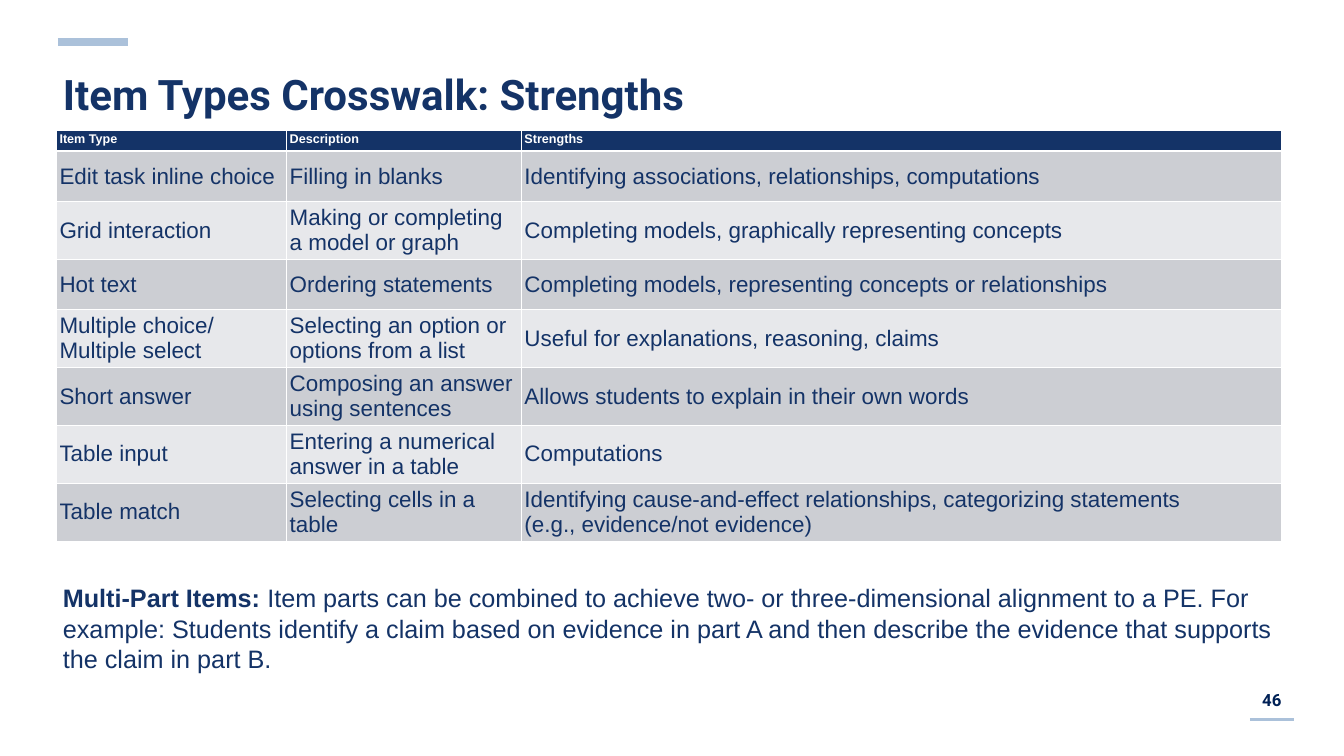
from dataclasses import dataclass

from lxml.etree import SubElement
from pptx import Presentation
from pptx.dml.color import RGBColor
from pptx.enum.shapes import MSO_CONNECTOR
from pptx.enum.text import MSO_ANCHOR, MSO_AUTO_SIZE, PP_ALIGN
from pptx.oxml.ns import qn
from pptx.util import Cm, Pt


@dataclass
class Theme:
    navy: str = "143367"
    number: str = "002156"
    accent: str = "ABC1DA"
    white: str = "FFFFFF"
    bands: tuple = ("CCCED3", "E7E8EB")
    heading_font: str = "Roboto"
    body_font: str = "Arial"
    title_size: int = 60
    note_size: int = 36
    cell_size: int = 32
    number_size: int = 24
    header_size: int = 18


theme = Theme()


def add_text(para, text, *, size, color=theme.navy, font=theme.body_font,
             bold=False, align=PP_ALIGN.LEFT):
    """Append text to a paragraph; a newline becomes a line break."""
    para.alignment = align
    for index, line in enumerate(text.split("\n")):
        if index:
            para.add_line_break()
        span = para.add_run()
        span.text = line
        span.font.name = font
        span.font.size = Pt(size)
        span.font.bold = bold
        span.font.color.rgb = RGBColor.from_string(color)


def set_border(cell, side, width):
    """Draw one white cell border; sides go in the order L, R, T, B."""
    line = SubElement(cell._tc.get_or_add_tcPr(), qn(f"a:ln{side}"), w=str(Pt(width)))
    fill = SubElement(line, qn("a:solidFill"))
    SubElement(fill, qn("a:srgbClr"), val=theme.white)


deck = Presentation()
deck.slide_width, deck.slide_height = Cm(67.73), Cm(38.1)
page = deck.slides.add_slide(deck.slide_layouts[5])

# Accent lines: left, right, y, width in points
for left, right, y, width in [(2.92, 6.43, 2.11, 11), (62.99, 65.2, 36.25, 5)]:
    accent = page.shapes.add_connector(MSO_CONNECTOR.STRAIGHT, Cm(left), Cm(y), Cm(right), Cm(y))
    accent.line.color.rgb = RGBColor.from_string(theme.accent)
    accent.line.width = Pt(width)
    SubElement(accent._element.spPr, qn("a:effectLst"))

# Page number
number_box = page.shapes.add_textbox(Cm(62.99), Cm(34.26), Cm(2.21), Cm(2.03))
number_box.text_frame.word_wrap = True
number_box.text_frame.vertical_anchor = MSO_ANCHOR.MIDDLE
add_text(number_box.text_frame.paragraphs[0], "46", size=theme.number_size,
         color=theme.number, font=theme.heading_font, bold=True, align=PP_ALIGN.CENTER)

# Title
title = page.shapes.title
title.left, title.top, title.width, title.height = Cm(2.92), Cm(3.2), Cm(61.98), Cm(4.37)
title.text_frame.auto_size = MSO_AUTO_SIZE.NONE
title.text_frame.vertical_anchor = MSO_ANCHOR.TOP
title_para = title.text_frame.paragraphs[0]
title_para.line_spacing = 1.05
add_text(title_para, "Item Types Crosswalk: Strengths", size=theme.title_size,
         font=theme.heading_font, bold=True)

# Item type table
rows = [
    ("Item Type", "Description", "Strengths"),
    ("Edit task inline choice", "Filling in blanks",
     "Identifying associations, relationships, computations"),
    ("Grid interaction", "Making or completing a model or graph",
     "Completing models, graphically representing concepts"),
    ("Hot text", "Ordering statements",
     "Completing models, representing concepts or relationships"),
    ("Multiple choice/ Multiple select", "Selecting an option or options from a list",
     "Useful for explanations, reasoning, claims"),
    ("Short answer", "Composing an answer using sentences",
     "Allows students to explain in their own words"),
    ("Table input", "Entering a numerical answer in a table", "Computations"),
    ("Table match", "Selecting cells in a table",
     "Identifying cause-and-effect relationships, categorizing statements \n"
     "(e.g., evidence/not evidence)"),
]
column_widths = [11.6, 11.83, 38.32]
row_heights = [1.04, 2.54, 2.8, 2.54, 2.8, 2.8, 2.8, 2.8]

table = page.shapes.add_table(len(rows), len(column_widths), Cm(2.82), Cm(6.58),
                              Cm(sum(column_widths)), Cm(sum(row_heights))).table
for column, width in zip(table.columns, column_widths):
    column.width = Cm(width)
for r, texts in enumerate(rows):
    table.rows[r].height = Cm(row_heights[r])
    header = r == 0
    for c, text in enumerate(texts):
        cell = table.cell(r, c)
        cell.margin_left = cell.margin_right = Cm(0.18)
        cell.margin_top = cell.margin_bottom = Cm(0.1)
        cell.vertical_anchor = MSO_ANCHOR.TOP if header else MSO_ANCHOR.MIDDLE
        for side in "LRTB":
            thick = (header and side == "B") or (r == 1 and side == "T")
            set_border(cell, side, 3 if thick else 1)
        cell.fill.solid()
        cell.fill.fore_color.rgb = RGBColor.from_string(
            theme.navy if header else theme.bands[(r - 1) % 2])
        add_text(cell.text_frame.paragraphs[0], text, bold=header,
                 size=theme.header_size if header else theme.cell_size,
                 color=theme.white if header else theme.navy)

# Note on multi-part items
note_box = page.shapes.add_textbox(Cm(2.92), Cm(29.24), Cm(61.9), Cm(4.88))
note_box.text_frame.word_wrap = True
note_box.text_frame.auto_size = MSO_AUTO_SIZE.SHAPE_TO_FIT_TEXT
note_para = note_box.text_frame.paragraphs[0]
add_text(note_para, "Multi-Part Items: ", size=theme.note_size, bold=True)
add_text(note_para, "Item parts can be combined to achieve two- or three-dimensional alignment "
         "to a PE. For example: Students identify a claim based on evidence in part A and then "
         "describe the evidence that supports the claim in part B.", size=theme.note_size)

deck.save("out.pptx")
